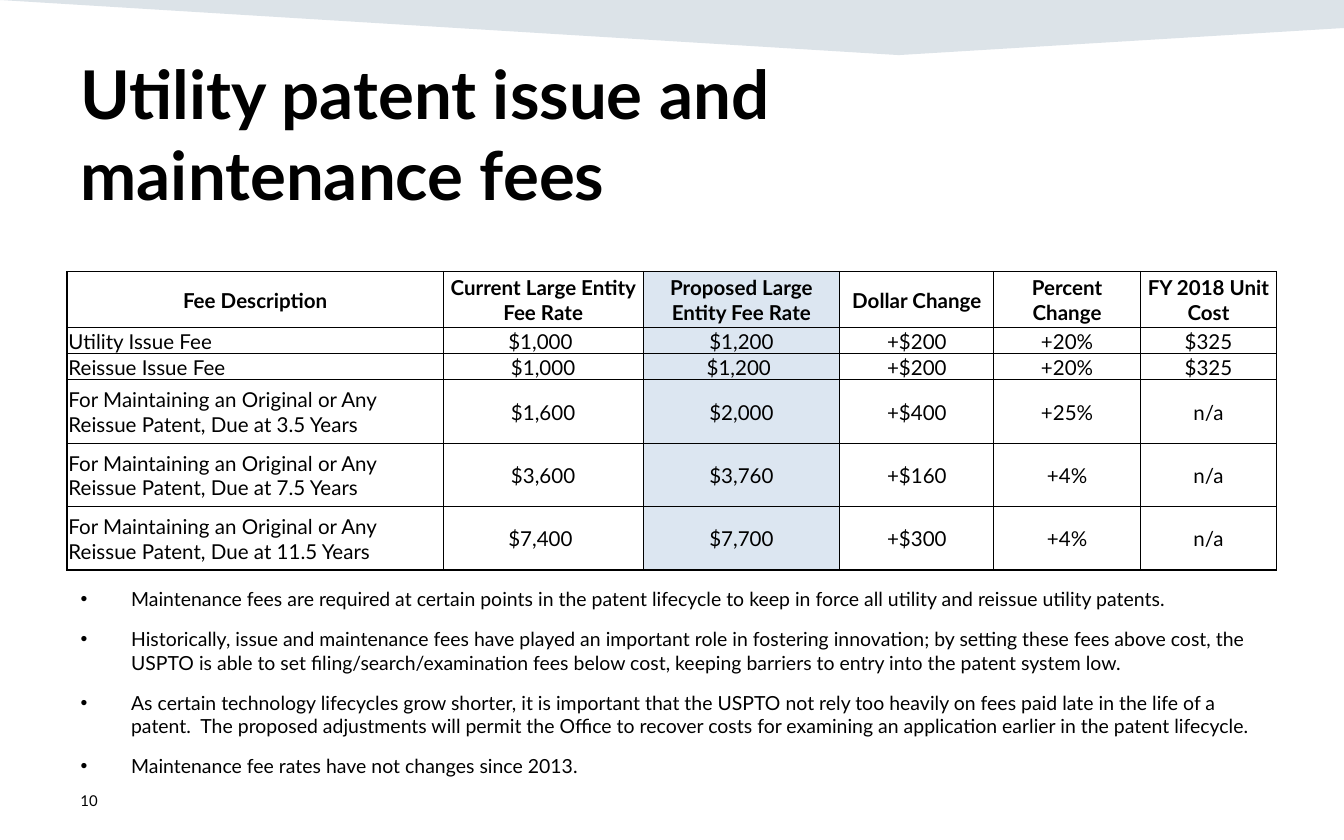
"""Build the slide on utility patent issue and maintenance fees."""
import pptx
import pptx.dml.color
import pptx.enum.text
import pptx.oxml
import pptx.oxml.ns
import pptx.util

Pt = pptx.util.Pt
ALIGN = pptx.enum.text.PP_ALIGN
ANCHOR = pptx.enum.text.MSO_ANCHOR
NS = pptx.oxml.ns.nsdecls("a")
COLORS = {"text": "000000", "band": "164469", "proposed": "DCE6F1"}


def add_run(p, text, size, bold=False):
    r = p.add_run()
    r.text = text
    r.font.name = "Lato"
    r.font.size = Pt(size)
    r.font.bold = bold
    r.font.color.rgb = pptx.dml.color.RGBColor.from_string(COLORS["text"])


def set_fill(fill, name):
    fill.solid()
    fill.fore_color.rgb = pptx.dml.color.RGBColor.from_string(COLORS[name])


prs = pptx.Presentation()
prs.slide_width, prs.slide_height = Pt(720), Pt(450)
s = prs.slides.add_slide(prs.slide_layouts[1])

builder = s.shapes.build_freeform(0, 0, scale=1)
builder.add_line_segments(
    [(Pt(x), Pt(y)) for x, y in [(720, 0), (720, 15), (481.5, 29.5)]], close=True)
band = builder.convert_to_shape()
band.shadow.inherit = False
set_fill(band.fill, "band")
band.line.fill.background()
color = band._element.spPr.find(".//" + pptx.oxml.ns.qn("a:srgbClr"))
color.append(pptx.oxml.parse_xml(f'<a:alpha {NS} val="15000"/>'))
s.shapes._spTree.insert(2, band._element)

title, body = s.placeholders
title.left, title.top, title.width, title.height = Pt(36), Pt(24.5), Pt(648), Pt(75)
body.left, body.top, body.width, body.height = Pt(36), Pt(311), Pt(648), Pt(109.5)
for sp in (title, body):
    sp.text_frame.word_wrap = True
    sp.text_frame.auto_size = pptx.enum.text.MSO_AUTO_SIZE.NONE
    sp.text_frame.vertical_anchor = ANCHOR.TOP

p = title.text_frame.paragraphs[0]
p.alignment = ALIGN.LEFT
add_run(p, "Utility patent issue and ", 36, True)
p.add_line_break()
add_run(p, "maintenance fees", 36, True)

bullets = [
    "Maintenance fees are required at certain points in the patent lifecycle to keep in force "
    "all utility and reissue utility patents.",
    "Historically, issue and maintenance fees have played an important role in fostering "
    "innovation; by setting these fees above cost, the USPTO is able to set "
    "filing/search/examination fees below cost, keeping barriers to entry into the patent "
    "system low.",
    "As certain technology lifecycles grow shorter, it is important that the USPTO not rely too "
    "heavily on fees paid late in the life of a patent.  The proposed adjustments will permit "
    "the Office to recover costs for examining an application earlier in the patent lifecycle.",
    "Maintenance fee rates have not changes since 2013.",
]
tf = body.text_frame
for i, text in enumerate(bullets):
    p = tf.add_paragraph() if i else tf.paragraphs[0]
    pPr = p._p.get_or_add_pPr()
    pPr.set("marL", str(Pt(27)))
    pPr.set("indent", str(-Pt(27)))
    pPr.append(pptx.oxml.parse_xml(f'<a:buFont {NS} typeface="Arial"/>'))
    pPr.append(pptx.oxml.parse_xml(f'<a:buChar {NS} char="•"/>'))
    p.space_before = Pt(9 if i else 0)
    add_run(p, text, 10.4)

number = s.shapes.add_textbox(Pt(36), Pt(417), Pt(162), Pt(23.5))
tf = number.text_frame
tf.word_wrap = True
tf.vertical_anchor = ANCHOR.MIDDLE
add_run(tf.paragraphs[0], "10", 8)

maintaining = "For Maintaining an Original or Any Reissue Patent, Due at "
rows = [
    ("Fee Description", "Current Large Entity Fee Rate", "Proposed Large Entity Fee Rate",
     "Dollar Change", "Percent Change", "FY 2018 Unit Cost"),
    ("Utility Issue Fee", "$1,000 ", "$1,200", "+$200", "+20%", "$325"),
    ("Reissue Issue Fee", "$1,000", "$1,200 ", "+$200", "+20%", "$325"),
    (maintaining + "3.5 Years", "$1,600", "$2,000", "+$400", "+25%", "n/a"),
    (maintaining + "7.5 Years", "$3,600", "$3,760", "+$160", "+4%", "n/a"),
    (maintaining + "11.5 Years", "$7,400 ", "$7,700", "+$300", "+4%", "n/a"),
]
widths = [201.5, 107, 105.5, 82.5, 78.5, 73]
heights = [30, 14, 14, 34, 34, 34]
table = s.shapes.add_table(len(rows), len(widths), Pt(36), Pt(145.5),
                           Pt(sum(widths)), Pt(sum(heights))).table
table.first_row = table.horz_banding = False
for column, width in zip(table.columns, widths):
    column.width = Pt(width)
for row, height in zip(table.rows, heights):
    row.height = Pt(height)

last_row, last_col = len(rows) - 1, len(widths) - 1
for i, row in enumerate(rows):
    for j, text in enumerate(row):
        cell = table.cell(i, j)
        cell.vertical_anchor = ANCHOR.MIDDLE
        cell.margin_left = cell.margin_right = cell.margin_top = Pt(0.7)
        cell.margin_bottom = Pt(0)
        p = cell.text_frame.paragraphs[0]
        p.alignment = ALIGN.CENTER if i == 0 or j else ALIGN.LEFT
        add_run(p, text, 11, i == 0)
        edges = {"L": j == 0, "R": j == last_col, "T": i == 0, "B": i == last_row}
        for side, outer in edges.items():
            cell._tc.get_or_add_tcPr().append(pptx.oxml.parse_xml(
                f'<a:ln{side} {NS} w="{Pt(1 if outer else 0.5)}"><a:solidFill>'
                f'<a:srgbClr val="{COLORS["text"]}"/></a:solidFill></a:ln{side}>'))
        if j == 2:
            set_fill(cell.fill, "proposed")
        else:
            cell.fill.background()

prs.save("out.pptx")
